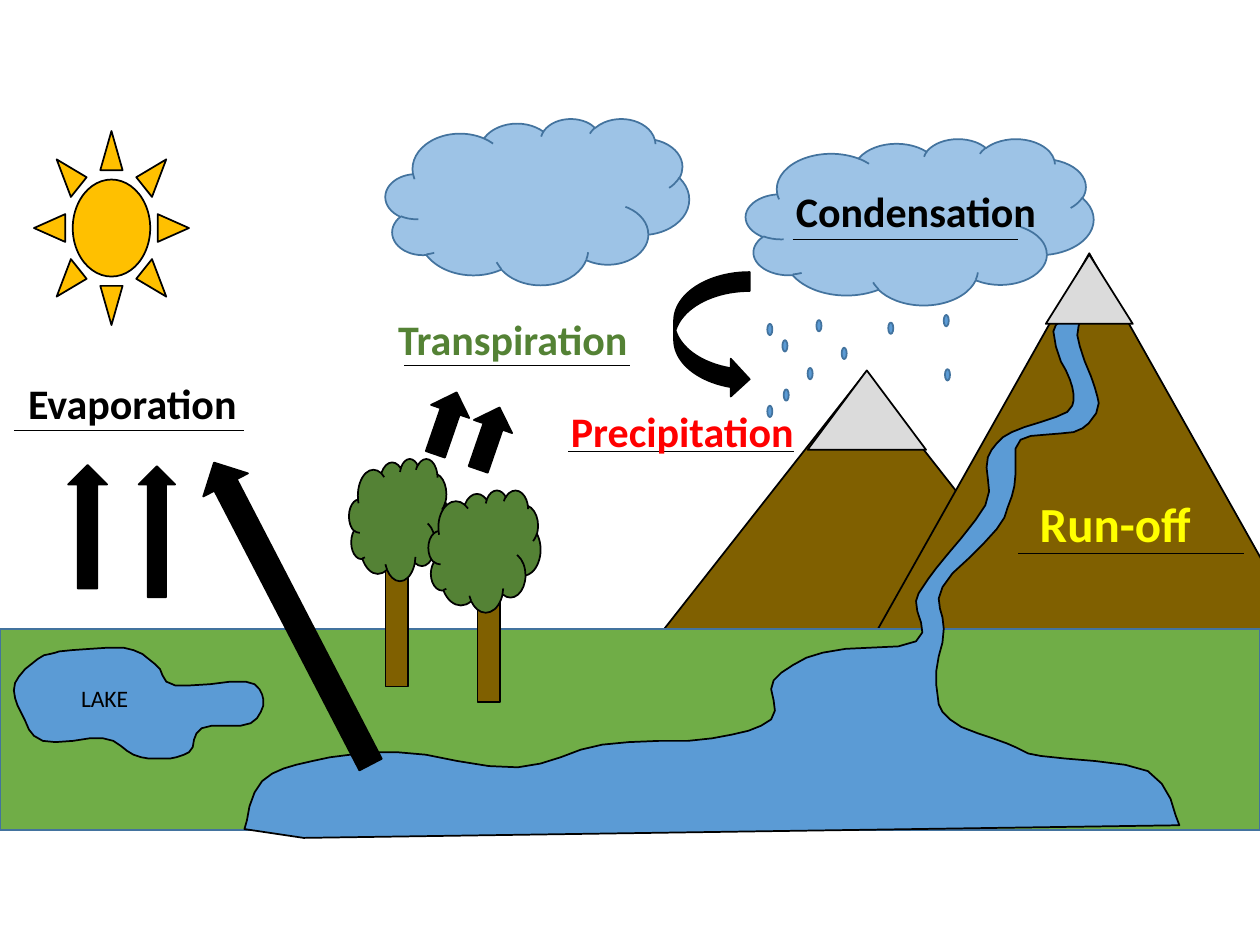
"""Build a slide that shows the water cycle as a landscape."""
import lxml.etree
import pptx
import pptx.dml.color
import pptx.enum.shapes
import pptx.enum.text
import pptx.oxml.ns
import pptx.util

Cm = pptx.util.Cm
Pt = pptx.util.Pt
RGBColor = pptx.dml.color.RGBColor
KIND = pptx.enum.shapes.MSO_SHAPE

INCH = 2.54
STEPS = 4
BLACK = RGBColor.from_string("000000")
BROWN = RGBColor.from_string("806000")
SKY = RGBColor.from_string("9DC3E6")
EDGE = RGBColor.from_string("43739E")
GOLD = RGBColor.from_string("FFC000")
SNOW = RGBColor.from_string("DBDBDB")
GRASS = RGBColor.from_string("70AD47")
WATER = RGBColor.from_string("5B9BD5")
LEAF = RGBColor.from_string("548235")
RED = RGBColor.from_string("FF0000")
YELLOW = RGBColor.from_string("FFFF00")

BACK = [
    (KIND.FLOWCHART_EXTRACT, (5.1, 2.97, 3.52, 2.24), BROWN, BLACK),
    (KIND.FLOWCHART_EXTRACT, (6.89, 2.01, 3.51, 3.12), BROWN, BLACK),
    (KIND.CLOUD, (5.92, 1.1, 2.76, 1.32), SKY, EDGE),
    (KIND.CLOUD, (3.06, 0.94, 2.41, 1.32), SKY, EDGE),
    (KIND.SUN, (0.27, 1.04, 1.23, 1.54), GOLD, BLACK),
    (KIND.FLOWCHART_EXTRACT, (6.41, 2.94, 0.94, 0.63), SNOW, BLACK),
    (KIND.RECTANGLE, (0, 4.99, 10, 1.6), GRASS, EDGE),
]
FRONT = [
    (KIND.FLOWCHART_EXTRACT, (8.3, 2.02, 0.69, 0.55), SNOW, BLACK),
    (KIND.RECTANGLE, (3.06, 4.49, 0.18, 0.96), BROWN, BLACK),
    (KIND.CLOUD, (2.77, 3.64, 0.79, 0.97), LEAF, BLACK),
    (KIND.RECTANGLE, (3.79, 4.61, 0.18, 0.96), BROWN, BLACK),
    (KIND.CLOUD, (3.4, 3.89, 0.89, 0.97), LEAF, BLACK),
    (KIND.UP_ARROW, (0.54, 3.69, 0.31, 0.98), BLACK, BLACK),
    (KIND.UP_ARROW, (1.1, 3.7, 0.29, 1.04), BLACK, BLACK),
    (KIND.UP_ARROW, (2.12, 3.52, 0.4, 2.7), BLACK, BLACK, 332.6),
    (KIND.UP_ARROW, (3.72, 3.22, 0.32, 0.52), BLACK, BLACK, 19),
    (KIND.UP_ARROW, (3.38, 3.1, 0.32, 0.52), BLACK, BLACK, 19),
    (KIND.CURVED_RIGHT_ARROW, (5.35, 2.16, 0.6, 1), BLACK, BLACK),
]
DROPS = [(6.09, 2.57), (6.21, 2.7), (6.48, 2.54), (6.22, 3.09), (6.41, 2.92),
         (7.05, 2.56), (7.49, 2.5), (6.68, 2.76), (7.5, 2.93), (6.09, 3.22)]
RULE = 1.79
RULES = [(0.11, 3.42, 1.83), (3.21, 2.9, RULE), (6.29, 1.9, RULE),
         (4.51, 3.58, RULE), (8.08, 4.39, RULE)]
LABELS = [
    ("LAKE", (0.27, 5.38, 1.12, 0.33), 13.5, BLACK, None),
    ("Evaporation", (-0.14, 2.95, 2.38, 0.5), 24, BLACK, True),
    ("Transpiration", (2.93, 2.44, 2.28, 0.5), 24, LEAF, True),
    ("Condensation", (6.17, 1.42, 2.2, 0.5), 24, BLACK, True),
    ("Precipitation", (4.31, 3.17, 2.21, 0.5), 24, RED, True),
    ("Run-off", (7.94, 3.87, 1.82, 0.57), 28, YELLOW, True),
]
WEST = [(863, 246), (838, 258), (840, 281), (851, 307), (847, 327),
        (803, 343), (784, 363), (782, 401), (743, 451), (727, 477),
        (727, 509), (653, 518), (614, 540), (612, 571), (565, 586),
        (478, 591), (411, 609), (315, 597), (248, 604), (208, 620),
        (194, 658)]
EAST = [(936, 655), (911, 612), (826, 600), (799, 590), (754, 571),
        (743, 543), (749, 499), (748, 466), (791, 420), (805, 386),
        (810, 349), (852, 343), (870, 328), (869, 308), (855, 266),
        (863, 246)]
SHORE = [(47, 517), (98, 514), (123, 527), (139, 544), (195, 541),
         (209, 555), (199, 574), (160, 578), (150, 597), (129, 602),
         (106, 599), (82, 586), (34, 588), (17, 566), (12, 542),
         (30, 523), (47, 517)]


def size(box):
    """Turn inches into lengths."""
    return [Cm(n * INCH) for n in box]


def apply(item, look):
    """Set each value of a dict on an object."""
    for name, value in look.items():
        setattr(item, name, value)


def bend(a, b, c, d, t):
    """Place a value on the smooth curve from b to c."""
    return round(b + t * (c - a) / 2
                 + t ** 2 * (a - 2.5 * b + 2 * c - d / 2)
                 + t ** 3 * (1.5 * (b - c) + (d - a) / 2))


def curve(knots):
    """Join the knots of a bank smoothly."""
    ends = [knots[0], *knots, knots[-1]]
    spans = zip(ends, ends[1:], ends[2:], ends[3:])
    line = [tuple(bend(*axis, step / STEPS) for axis in zip(*span))
            for span in spans for step in range(STEPS)]
    return line + [knots[-1]]


def paint(shape, fill, edge):
    """Give a shape a plain fill and a thin edge."""
    shape.shadow.inherit = False
    shape.fill.solid()
    shape.fill.fore_color.rgb = fill
    shape.line.color.rgb = edge
    shape.line.width = Pt(1)


def add_form(slide, kind, box, fill, edge, turn=0):
    """Add a preset shape."""
    shape = slide.shapes.add_shape(kind, *size(box))
    paint(shape, fill, edge)
    shape.rotation = turn


def add_pool(slide, points):
    """Add a body of water from points in hundredths of an inch."""
    pen = slide.shapes.build_freeform(*points[0], scale=Cm(INCH / 100))
    pen.add_line_segments(points[1:], close=True)
    paint(pen.convert_to_shape(), WATER, BLACK)


def add_rule(slide, left, top, width):
    """Add a thin level line."""
    rule = slide.shapes.add_connector(
        pptx.enum.shapes.MSO_CONNECTOR.STRAIGHT,
        *size((left, top, left + width, top)))
    rule.line.color.rgb = BLACK
    rule.line.width = Pt(0.5)
    lxml.etree.SubElement(rule.element.spPr, pptx.oxml.ns.qn("a:effectLst"))


def add_label(slide, text, box, points, color, bold):
    """Add a centred label."""
    frame = slide.shapes.add_textbox(*size(box)).text_frame
    apply(frame, {"word_wrap": True,
                  "auto_size": pptx.enum.text.MSO_AUTO_SIZE.SHAPE_TO_FIT_TEXT})
    para = frame.paragraphs[0]
    para.alignment = pptx.enum.text.PP_ALIGN.CENTER
    run = para.add_run()
    run.text = text
    apply(run.font, {"name": "Calibri", "size": Pt(points), "bold": bold})
    run.font.color.rgb = color


def main():
    """Build the slide and save it."""
    deck = pptx.Presentation()
    apply(deck, {"slide_width": Cm(25.4), "slide_height": Cm(19.05)})
    slide = deck.slides.add_slide(deck.slide_layouts[6])
    for form in BACK:
        add_form(slide, *form)
    add_pool(slide, curve(WEST) + [(241, 665)] + curve(EAST))
    add_pool(slide, curve(SHORE))
    for form in FRONT:
        add_form(slide, *form)
    for left, top in DROPS:
        add_form(slide, KIND.FLOWCHART_CONNECTOR,
                 (left, top, 0.04, 0.09), WATER, EDGE)
    for rule in RULES:
        add_rule(slide, *rule)
    for label in LABELS:
        add_label(slide, *label)
    deck.save("out.pptx")


if __name__ == "__main__":
    main()
